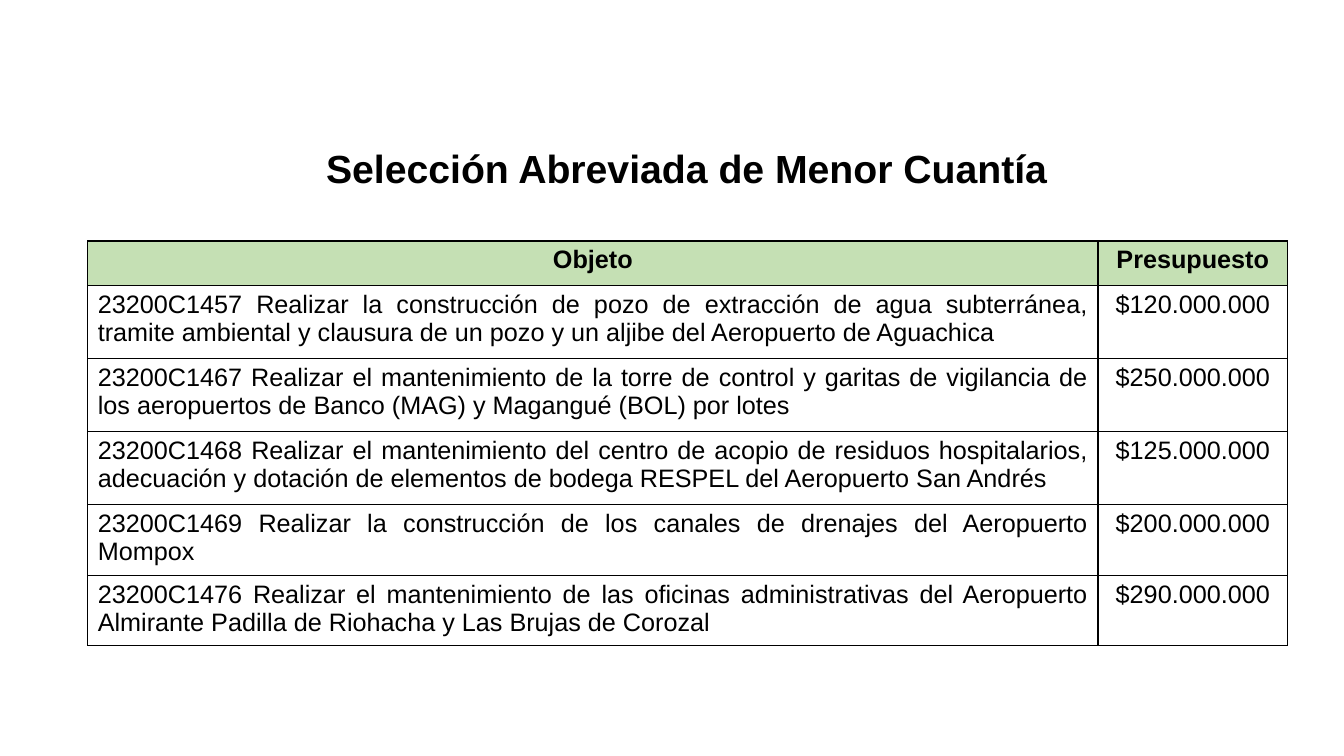
from typing import NamedTuple

from pptx import Presentation
from pptx.dml.color import RGBColor
from pptx.enum.text import MSO_AUTO_SIZE as Fit, PP_ALIGN as Align
from pptx.oxml import parse_xml
from pptx.oxml.ns import nsdecls
from pptx.util import Inches, Pt

WIDE, HIGH = Inches(13.33), Inches(7.5)
BLACK = RGBColor(0x00, 0x00, 0x00)
GREEN = RGBColor(0xC5, 0xE0, 0xB4)
FONT = "Arial"

# Shares of the slide's size, in percent
LEFT, TOP = 6.53, 31.87
COLS = (75.17, 14.1)
HEAD, TALL, LOW = 5.87, 9.67, 9.33


class Item(NamedTuple):
    goal: str
    cost: str
    high: float


ITEMS = (
    Item("23200C1457 Realizar la construcción de pozo de extracción de agua subterránea, "
         "tramite ambiental y clausura de un pozo y un aljibe del Aeropuerto de Aguachica",
         "$120.000.000", TALL),
    Item("23200C1467 Realizar el mantenimiento de la torre de control y garitas de vigilancia de "
         "los aeropuertos de Banco (MAG) y Magangué (BOL) por lotes",
         "$250.000.000", TALL),
    Item("23200C1468 Realizar el mantenimiento del centro de acopio de residuos hospitalarios, "
         "adecuación y dotación de elementos de bodega RESPEL del Aeropuerto San Andrés",
         "$125.000.000", TALL),
    Item("23200C1469 Realizar la construcción de los canales de drenajes del Aeropuerto Mompox",
         "$200.000.000", LOW),
    Item("23200C1476 Realizar el mantenimiento de las oficinas administrativas del Aeropuerto "
         "Almirante Padilla de Riohacha y Las Brujas de Corozal",
         "$290.000.000", LOW),
)


def across(share: float) -> int:
    return round(WIDE * share / 100)


def down(share: float) -> int:
    return round(HIGH * share / 100)


def write(frame, text: str, *, size: float = 18, bold: bool = False,
          align: Align = Align.CENTER) -> None:
    para = frame.paragraphs[0]
    para.alignment = align
    run = para.add_run()
    run.text = text
    font = run.font
    font.name, font.size, font.bold = FONT, Pt(size), bold
    font.color.rgb = BLACK


def border(cell) -> None:
    """Draw a thin black line on all four sides of the cell."""
    props = cell._tc.get_or_add_tcPr()
    for spot, side in enumerate(("lnL", "lnR", "lnT", "lnB")):
        props.insert(spot, parse_xml(
            f'<a:{side} {nsdecls("a")} w="{Pt(1)}"><a:solidFill>'
            f'<a:srgbClr val="{BLACK}"/></a:solidFill></a:{side}>'))


def add_title(slide) -> None:
    box = slide.shapes.add_textbox(across(10.95), down(18.4), across(80.27), down(7.6))
    frame = box.text_frame
    frame.word_wrap = True
    frame.auto_size = Fit.SHAPE_TO_FIT_TEXT
    write(frame, "Selección Abreviada de Menor Cuantía", size=28, bold=True)


def add_grid(slide) -> None:
    rows = (Item("Objeto", "Presupuesto", HEAD), *ITEMS)
    total = sum(row.high for row in rows)
    table = slide.shapes.add_table(len(rows), len(COLS), across(LEFT), down(TOP),
                                   across(sum(COLS)), down(total)).table
    table.horz_banding = False
    for col, share in zip(table.columns, COLS):
        col.width = across(share)
    for y, item in enumerate(rows):
        table.rows[y].height = down(item.high)
        for x, text in enumerate((item.goal, item.cost)):
            cell = table.cell(y, x)
            if y == 0:
                cell.fill.solid()
                cell.fill.fore_color.rgb = GREEN
            else:
                cell.fill.background()
            border(cell)
            write(cell.text_frame, text, bold=y == 0,
                  align=Align.JUSTIFY if y and x == 0 else Align.CENTER)


def main() -> None:
    deck = Presentation()
    deck.slide_width, deck.slide_height = WIDE, HIGH
    slide = deck.slides.add_slide(deck.slide_layouts[6])
    add_title(slide)
    add_grid(slide)
    deck.save("out.pptx")


if __name__ == "__main__":
    main()
